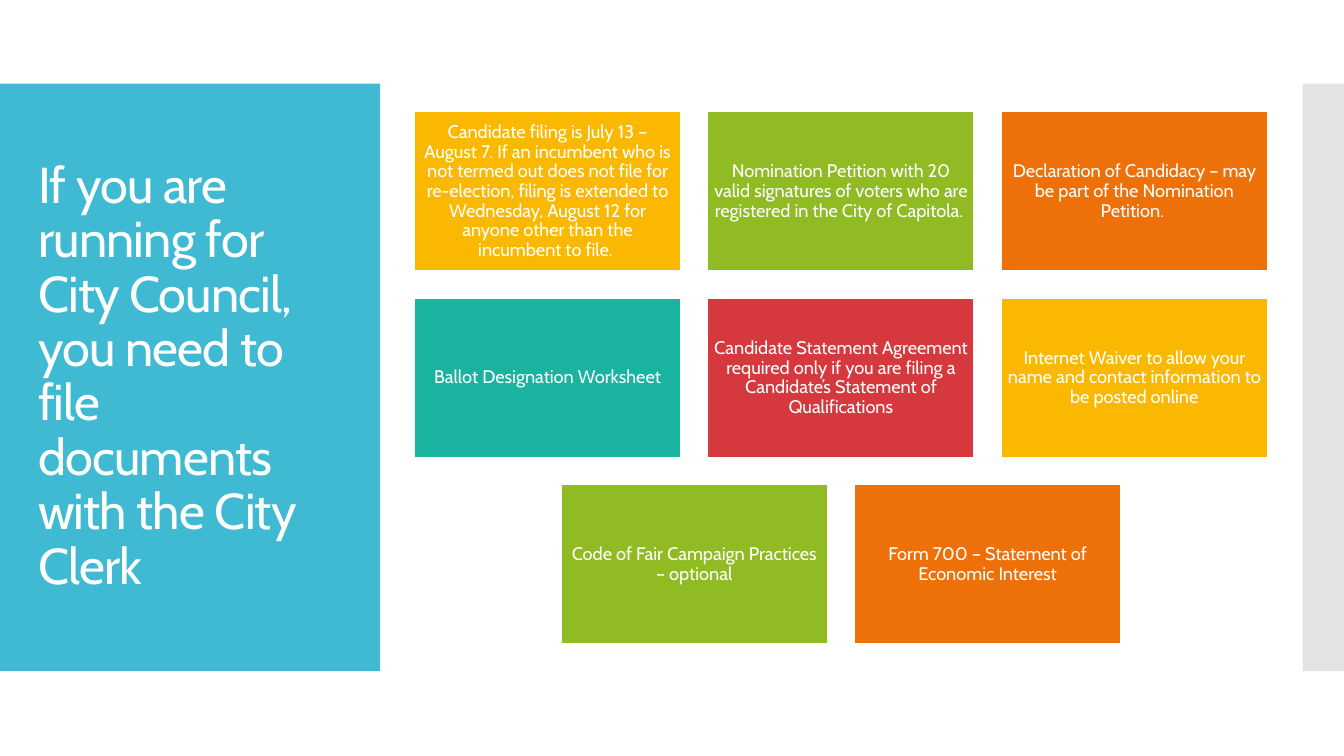
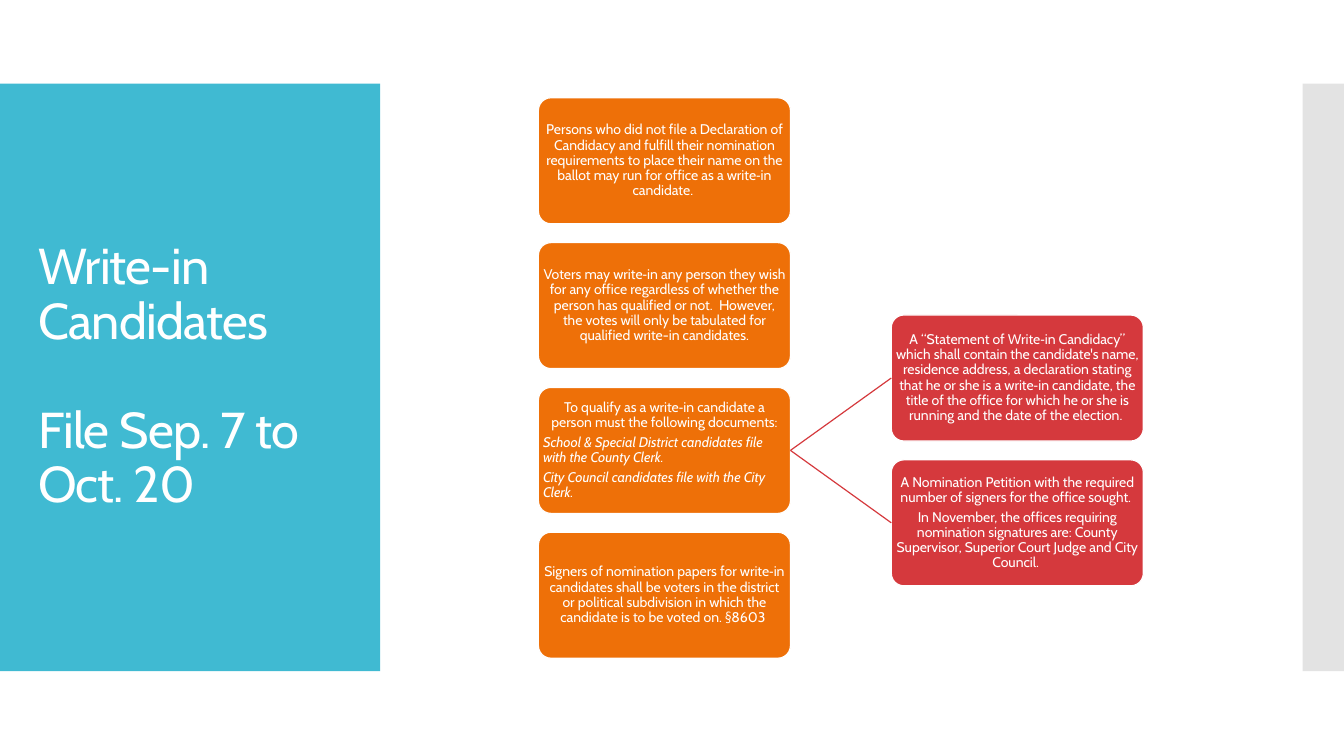
from collections import namedtuple

from lxml.etree import SubElement
from pptx import Presentation
from pptx.dml.color import RGBColor
from pptx.enum.shapes import MSO_CONNECTOR, MSO_SHAPE
from pptx.enum.text import MSO_ANCHOR, PP_ALIGN
from pptx.oxml.ns import qn
from pptx.util import Emu, Pt

Box = namedtuple("Box", "left top width height")

EMU_PER_PX = 9144
FONT = "Cabin"
LINE_SPACING = 0.9
OUTLINE = Pt(0.85)

WHITE = RGBColor(0xFF, 0xFF, 0xFF)
BLUE = RGBColor(0x40, 0xBA, 0xD2)
GRAY = RGBColor(0xC8, 0xC8, 0xC8)
YELLOW = RGBColor(0xFA, 0xB9, 0x00)
GREEN = RGBColor(0x90, 0xBB, 0x23)
ORANGE = RGBColor(0xEE, 0x70, 0x08)
TEAL = RGBColor(0x1A, 0xB3, 0x9F)
RED = RGBColor(0xD5, 0x39, 0x3D)

TITLE_BAND = Box(0, 83, 377, 583)
EDGE_BAND = Box(1292, 83, 41, 583)
TITLE_BOX = Box(28, 123, 322, 503)
TILE_AREA = Box(411, 111, 846, 528)
TREE_AREA = Box(534, 97, 600, 556)

DOCUMENT_ROWS = [
    [
        (YELLOW, "Candidate filing is July 13 – August 7. If an incumbent who is "
                 "not termed out does not file for re-election, filing is extended to "
                 "Wednesday, August 12 for anyone other than the incumbent to file. "),
        (GREEN, "Nomination Petition with 20 valid signatures of voters who are "
                "registered in the City of Capitola. "),
        (ORANGE, "Declaration of Candidacy – may be part of the Nomination Petition. "),
    ],
    [
        (TEAL, "Ballot Designation Worksheet"),
        (RED, "Candidate Statement Agreement required only if you are filing a "
              "Candidate’s Statement of Qualifications"),
        (YELLOW, "Internet Waiver to allow your name and contact information to be "
                 "posted online"),
    ],
    [
        (GREEN, "Code of Fair Campaign Practices – optional"),
        (ORANGE, "Form 700 – Statement of Economic Interest"),
    ],
]

WRITE_IN_RULES = [
    ["Persons who did not file a Declaration of Candidacy and fulfill their nomination "
     "requirements to place their name on the ballot may run for office as a write‑in "
     "candidate. "],
    ["Voters may write‑in any person they wish for any office regardless of whether the "
     "person has qualified or not.  However, the votes will only be tabulated for "
     "qualified write-in candidates."],
    ["To qualify as a write‑in candidate a person must the following documents:"],
    ["Signers of nomination papers for write‑in candidates shall be voters in the "
     "district or political subdivision in which the candidate is to be voted on. §8603 "],
]
QUALIFY_INDEX = 2
FILING_OFFICES = [
    "School & Special District candidates file with the County Clerk.",
    "City Council candidates file with the City Clerk.",
]
REQUIRED_DOCUMENTS = [
    ["A “Statement of Write‑in Candidacy” which shall contain the candidate's name, "
     "residence address, a declaration stating that he or she is a write‑in candidate, "
     "the title of the office for which he or she is running and the date of the "
     "election. "],
    ["A Nomination Petition with the required number of signers for the office sought. ",
     "In November, the offices requiring nomination signatures are: County Supervisor, "
     "Superior Court Judge and City Council. "],
]


def px(length):
    return Emu(round(length * EMU_PER_PX))


def place(box):
    return [px(length) for length in box]


def add_block(page, kind, box, fill, outline=None):
    block = page.shapes.add_shape(kind, *place(box))
    block.shadow.inherit = False
    block.fill.solid()
    block.fill.fore_color.rgb = fill
    if outline is None:
        block.line.fill.background()
    else:
        block.line.color.rgb = outline
        block.line.width = OUTLINE
    return block


def prepare_frame(shape, inset_x, inset_y):
    frame = shape.text_frame
    frame.word_wrap = True
    frame.vertical_anchor = MSO_ANCHOR.MIDDLE
    frame.margin_left = frame.margin_right = px(inset_x)
    frame.margin_top = frame.margin_bottom = px(inset_y)
    return frame


def write_paragraph(frame, text, size, align=PP_ALIGN.CENTER, italic=False):
    para = frame.paragraphs[0]
    if para.runs:
        para = frame.add_paragraph()
    para.alignment = align
    para.line_spacing = LINE_SPACING
    span = para.add_run()
    span.text = text
    span.font.name = FONT
    span.font.size = Pt(size)
    span.font.color.rgb = WHITE
    if italic:
        span.font.italic = True
    return para


def add_card(page, kind, box, fill, texts, size, inset):
    card = add_block(page, kind, box, fill, WHITE)
    frame = prepare_frame(card, inset, inset)
    for text in texts:
        write_paragraph(frame, text, size).space_after = Pt(size * 0.35)
    return card


def add_title(page, box, lines):
    title = page.shapes.add_textbox(*place(box))
    frame = prepare_frame(title, 10, 5)
    for index, text in enumerate(lines):
        para = write_paragraph(frame, text, 36, PP_ALIGN.LEFT)
        para.runs[0].font._element.set("spc", "-60")
        if index:
            para.space_before = Pt(39)


def add_page(deck, title_lines):
    page = deck.slides.add_slide(deck.slide_layouts[6])
    add_block(page, MSO_SHAPE.RECTANGLE, TITLE_BAND, BLUE)
    edge = add_block(page, MSO_SHAPE.RECTANGLE, EDGE_BAND, GRAY)
    color = edge._element.spPr.find(qn("a:solidFill"))[0]
    SubElement(color, qn("a:alpha")).set("val", "50000")
    add_title(page, TITLE_BOX, title_lines)
    return page


def add_document_tiles(page, area, rows):
    tile_width, tile_height, gap = 264, 158, 27
    for row_index, row in enumerate(rows):
        row_width = len(row) * (tile_width + gap) - gap
        row_left = area.left + (area.width - row_width) / 2
        top = area.top + row_index * (tile_height + gap)
        for column, (fill, text) in enumerate(row):
            left = row_left + column * (tile_width + gap)
            box = Box(left, top, tile_width, tile_height)
            add_card(page, MSO_SHAPE.RECTANGLE, box, fill, [text], 13, 5)


def add_node(page, box, fill, texts):
    node = add_card(page, MSO_SHAPE.ROUNDED_RECTANGLE, box, fill, texts, 10, 1)
    node.adjustments[0] = 0.1
    return node


def add_branch(page, parent, child):
    branch = page.shapes.add_connector(MSO_CONNECTOR.STRAIGHT, 0, 0, 0, 0)
    branch.begin_connect(parent, 3)
    branch.end_connect(child, 1)
    branch.line.color.rgb = RED
    branch.line.width = OUTLINE
    SubElement(branch._element.spPr, qn("a:effectLst"))


def add_write_in_tree(page, area):
    node_width, node_height = 250, 125
    pitch = (area.height - node_height) / (len(WRITE_IN_RULES) - 1)
    rules = [
        add_node(page, Box(area.left, area.top + index * pitch, node_width, node_height),
                 ORANGE, texts)
        for index, texts in enumerate(WRITE_IN_RULES)
    ]
    qualify = rules[QUALIFY_INDEX]
    for text in FILING_OFFICES:
        para = write_paragraph(qualify.text_frame, text, 10, PP_ALIGN.LEFT, italic=True)
        para.space_after = Pt(3.5)

    left = area.left + area.width - node_width
    first = QUALIFY_INDEX - (len(REQUIRED_DOCUMENTS) - 1) / 2
    for index, texts in enumerate(REQUIRED_DOCUMENTS):
        top = area.top + (first + index) * pitch
        child = add_node(page, Box(left, top, node_width, node_height), RED, texts)
        add_branch(page, qualify, child)


def main():
    deck = Presentation()
    deck.slide_width, deck.slide_height = px(1333), px(750)

    council = add_page(deck, ["If you are running for City Council, you need to file "
                              "documents with the City Clerk"])
    add_document_tiles(council, TILE_AREA, DOCUMENT_ROWS)

    write_in = add_page(deck, ["Write-in Candidates", "File Sep. 7 to Oct. 20"])
    add_write_in_tree(write_in, TREE_AREA)

    deck.save("out.pptx")


if __name__ == "__main__":
    main()
